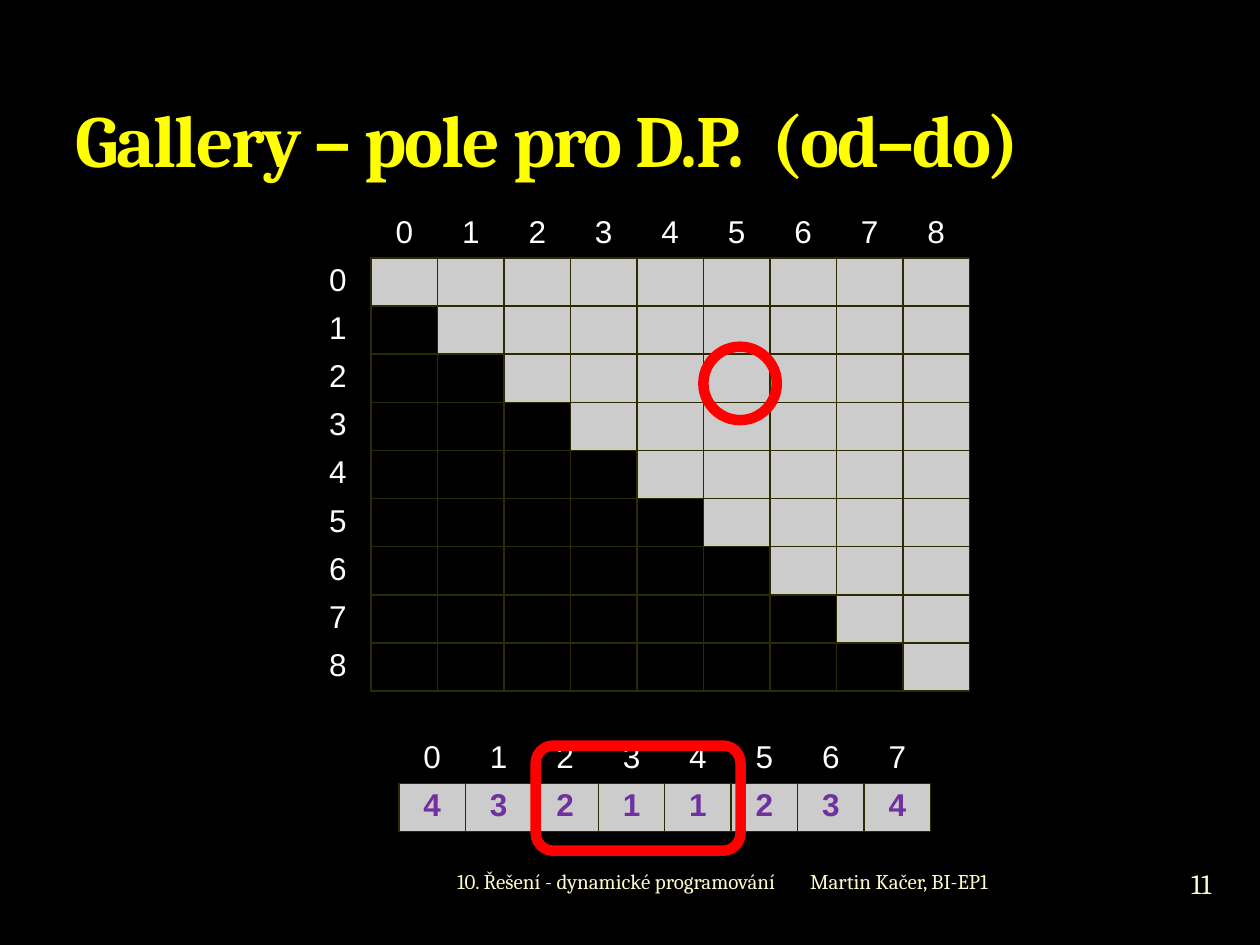
from lxml import etree
from pptx import Presentation
from pptx.dml.color import RGBColor
from pptx.enum.shapes import MSO_SHAPE
from pptx.enum.text import MSO_ANCHOR, PP_ALIGN
from pptx.oxml.ns import qn
from pptx.util import Cm, Pt

LEFT, CENTER, RIGHT = PP_ALIGN.LEFT, PP_ALIGN.CENTER, PP_ALIGN.RIGHT
MIDDLE, BOTTOM = MSO_ANCHOR.MIDDLE, MSO_ANCHOR.BOTTOM
OVAL, ROUNDED = MSO_SHAPE.OVAL, MSO_SHAPE.ROUNDED_RECTANGLE
COLUMN_WIDTH, ROW_HEIGHT = 1.34, 0.97
GRAY, GRID, WHITE, PURPLE, RED = "CCCCCC", "2D2901", "FFFFFF", "7030A0", "FF0000"


def style_text(frame, font_name, size, color, align, bold=False):
    paragraph = frame.paragraphs[0]
    paragraph.alignment = align
    for run in paragraph.runs:
        run.font.name = font_name
        run.font.size = Pt(size)
        run.font.bold = bold
        run.font.color.rgb = RGBColor.from_string(color)


def style_cell(cell, text, color, bold, filled, sides):
    """Write a table cell; sides names the borders drawn, out of L, R, T and B."""
    cell.text_frame.text = text
    style_text(cell.text_frame, "Arial", 18, color, CENTER, bold)
    cell.margin_top = cell.margin_bottom = Cm(0.1)
    if filled:
        cell.fill.solid()
        cell.fill.fore_color.rgb = RGBColor.from_string(GRAY)
    else:
        cell.fill.background()
    properties = cell._tc.get_or_add_tcPr()
    for position, side in enumerate("LRTB"):
        border = etree.Element(qn(f"a:ln{side}"), w=str(Pt(1)))
        if side in sides:
            fill = etree.SubElement(border, qn("a:solidFill"))
            etree.SubElement(fill, qn("a:srgbClr"), val=GRID)
        else:
            etree.SubElement(border, qn("a:noFill"))
        properties.insert(position, border)


prs = Presentation()
prs.slide_width, prs.slide_height = Cm(25.4), Cm(19.05)
slide = prs.slides.add_slide(prs.slide_layouts[5])
slide.background.fill.solid()
slide.background.fill.fore_color.rgb = RGBColor.from_string("000000")

# Title
title = slide.shapes.title
title.left, title.top, title.width, title.height = Cm(1.27), Cm(0.42), Cm(22.86), Cm(3.39)
title.text_frame.text = "Gallery – pole pro D.P.  (od–do)"
title.text_frame.vertical_anchor = BOTTOM
style_text(title.text_frame, "Cambria", 42, "FFFF00", LEFT, bold=True)
title_properties = title.text_frame.paragraphs[0].runs[0].font._element
title_properties.set("spc", "-100")
outline = etree.Element(qn("a:ln"), w=str(Pt(0.25)))
outline_fill = etree.SubElement(outline, qn("a:solidFill"))
outline_color = etree.SubElement(outline_fill, qn("a:srgbClr"), val="3C4422")
etree.SubElement(outline_color, qn("a:alpha"), val="25000")
title_properties.insert(0, outline)

# Footer
for text, left, top, width, height, size, align, inset in (
    ("Martin Kačer, BI-EP1", 16.08, 17.23, 7.2, 1.06, 12, LEFT, 0.25),
    ("11", 23.37, 17.17, 1.69, 1.27, 16, CENTER, 0),
    ("10. Řešení - dynamické programování", 5.93, 17.23, 9.95, 1.06, 12, RIGHT, 0.25),
):
    footer = slide.shapes.add_textbox(Cm(left), Cm(top), Cm(width), Cm(height)).text_frame
    footer.word_wrap = True
    footer.vertical_anchor = MIDDLE
    footer.margin_left = footer.margin_right = Cm(inset)
    footer.margin_top = footer.margin_bottom = Cm(inset / 2)
    footer.text = text
    style_text(footer, "Cambria", size, "FEFAC9", align)

# Tables: from-to matrix above, gallery values below
tables = []
for left, top, row_count, column_count in ((6.14, 4.23, 10, 10), (8.04, 14.82, 2, 8)):
    table = slide.shapes.add_table(
        row_count, column_count, Cm(left), Cm(top),
        Cm(column_count * COLUMN_WIDTH), Cm(row_count * ROW_HEIGHT),
    ).table
    table.first_row = table.horz_banding = False
    for column in table.columns:
        column.width = Cm(COLUMN_WIDTH)
    for row in table.rows:
        row.height = Cm(ROW_HEIGHT)
    tables.append(table)
matrix, gallery = tables

for row in range(10):
    for column in range(10):
        if row and column:
            text, sides = "", "LRTB"
        elif row:
            text, sides = str(row - 1), "R"
        elif column:
            text, sides = str(column - 1), "B"
        else:
            text, sides = "", ""
        style_cell(matrix.cell(row, column), text, WHITE, False, 0 < row <= column, sides)

for column, value in enumerate((4, 3, 2, 1, 1, 2, 3, 4)):
    style_cell(gallery.cell(0, column), str(column), WHITE, False, False, "B")
    style_cell(gallery.cell(1, column), str(value), PURPLE, True, True, "LRTB")

# Highlights: one matrix cell and the range it stands for
for outline_kind, left, top, width, height in (
    (OVAL, 14.18, 6.99, 1.48, 1.48),
    (ROUNDED, 10.8, 15.03, 4.13, 2.12),
):
    highlight = slide.shapes.add_shape(outline_kind, Cm(left), Cm(top), Cm(width), Cm(height))
    highlight.shadow.inherit = False
    highlight.fill.background()
    highlight.line.color.rgb = RGBColor.from_string(RED)
    highlight.line.width = Pt(6)

prs.save("out.pptx")
